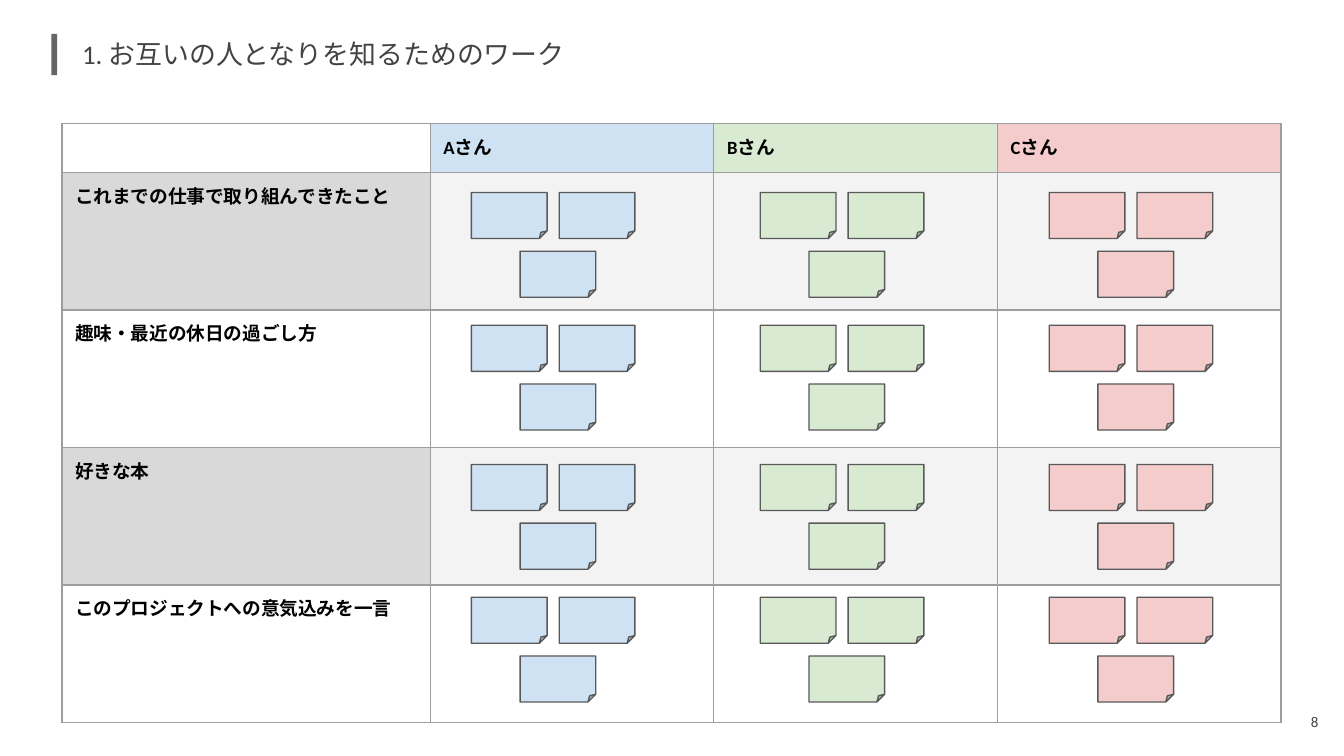
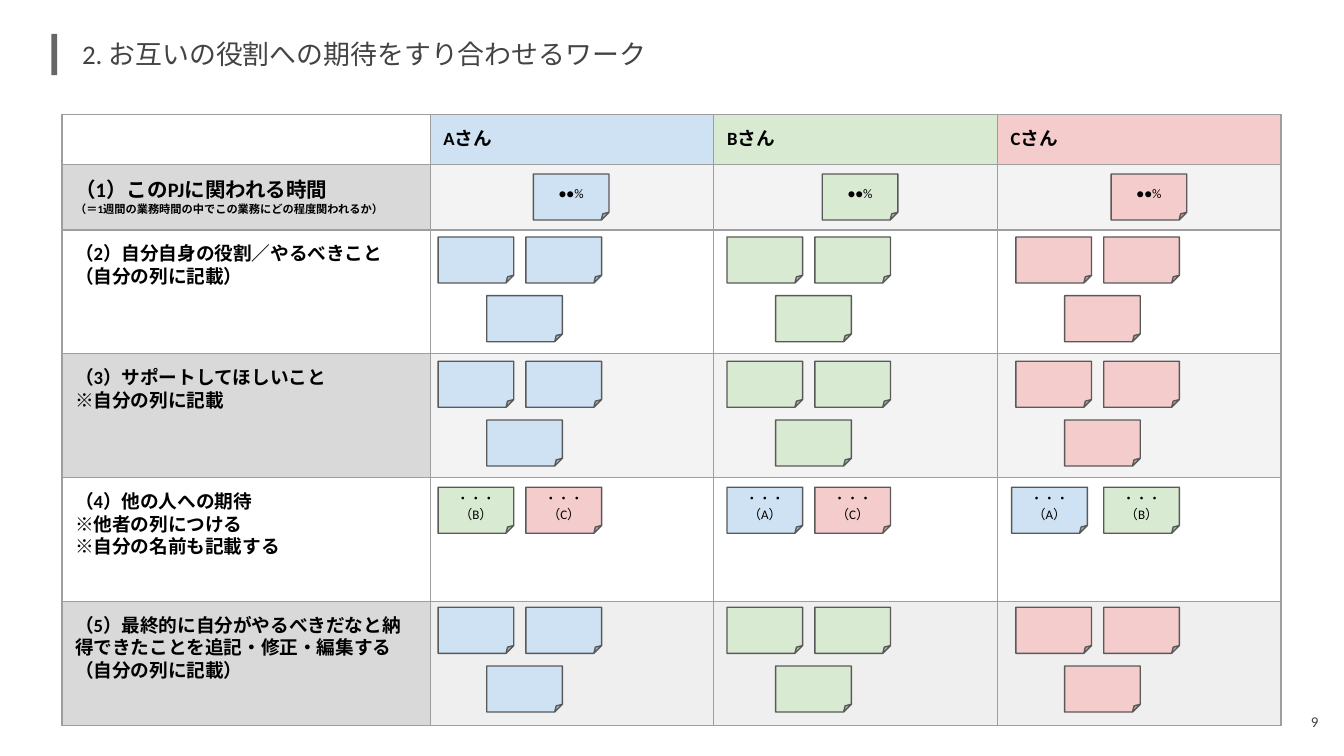
from itertools import product

from lxml.etree import SubElement
from pptx import Presentation
from pptx.dml.color import RGBColor
from pptx.enum.lang import MSO_LANGUAGE_ID as Lang
from pptx.enum.shapes import MSO_SHAPE as Shape
from pptx.enum.text import MSO_ANCHOR as Anchor, MSO_AUTO_SIZE as AutoSize, PP_ALIGN as Align
from pptx.oxml import parse_xml
from pptx.oxml.ns import nsdecls, qn
from pptx.util import Cm, Pt

COLORS = {
    "A": "CFE2F3", "B": "D9EAD3", "C": "F4CCCC",
    "ink": "000000", "title": "434343", "bar": "666666",
    "border": "9E9E9E", "note_line": "595959",
    "label": "D9D9D9", "shade": "F3F3F3", "last_shade": "EFEFEF",
}
FONT = "Calibri"
PEOPLE = "ABC"
NO_STYLE = "{2D5ABB26-0587-4C30-8999-92F81FD0307C}"

# All lengths are in centimetres
TABLE_LEFT = 1.17
LABEL_WIDTH, PERSON_WIDTH = 6.96, 5.36
NOTE_SIZE = (1.43, 0.87)
NOTE_STEP = 5.46                                  # from one person to the next
PAIR = [(0, 0), (1.66, 0)]
TRIO = PAIR + [(0.92, 1.11)]

WORKS = [
    {
        "title": "1. お互いの人となりを知るためのワーク",
        "page": "8", "top": 2.33, "header": 0.89, "notes_left": 7.74,
        "rows": [
            {"height": 2.6, "label": ["これまでの仕事で取り組んできたこと"], "notes": 1.31},
            {"height": 2.6, "label": ["趣味・最近の休日の過ごし方"], "notes": 3.82},
            {"height": 2.6, "label": ["好きな本"], "notes": 6.45},
            {"height": 2.6, "label": ["このプロジェクトへの意気込みを一言"], "notes": 8.96},
        ],
    },
    {
        "title": "2. お互いの役割への期待をすり合わせるワーク",
        "page": "9", "top": 2.17, "header": 0.94, "notes_left": 7.11,
        "rows": [
            {"height": 1.17, "notes": 1.12, "kind": "share", "sizes": [11, 6],
             "label": ["（1）このPJに関われる時間",
                       "（＝1週間の業務時間の中でこの業務にどの程度関われるか）"]},
            {"height": 2.34, "notes": 2.31,
             "label": ["（2）自分自身の役割／やるべきこと", "（自分の列に記載）"]},
            {"height": 2.34, "notes": 4.66,
             "label": ["（3）サポートしてほしいこと", "※自分の列に記載"]},
            {"height": 2.34, "notes": 7.04, "kind": "peers",
             "label": ["（4）他の人への期待", "※他者の列につける", "※自分の名前も記載する"]},
            {"height": 2.34, "notes": 9.31, "shade": "last_shade",
             "label": ["（5）最終的に自分がやるべきだなと納得できたことを"
                       "追記・修正・編集する（自分の列に記載）"]},
        ],
    },
]


def rgb(name):
    return RGBColor.from_string(COLORS[name])


def set_all(target, values):
    for name, value in values.items():
        setattr(target, name, value)


def place(shape, left, top, width, height):
    set_all(shape, {"left": Cm(left), "top": Cm(top),
                    "width": Cm(width), "height": Cm(height)})


def margins(inset):
    sides = ("left", "right", "top", "bottom")
    return {f"margin_{side}": Cm(inset) for side in sides}


def write(frame, lines, sizes, color="ink", bold=False, align=Align.LEFT):
    """Write one paragraph per line; a single size serves all lines."""
    sizes = sizes if len(sizes) == len(lines) else sizes * len(lines)
    for index, (line, size) in enumerate(zip(lines, sizes)):
        paragraph = frame.add_paragraph() if index else frame.paragraphs[0]
        paragraph.alignment = align
        run = paragraph.add_run()
        run.text = line
        set_all(run.font, {"name": FONT, "size": Pt(size), "bold": bold,
                           "language_id": Lang.JAPANESE})
        run.font.color.rgb = rgb(color)
        SubElement(run.font._element, qn("a:ea"), typeface=FONT)


def add_filled(slide, kind, box, fill):
    shape = slide.shapes.add_shape(kind, *map(Cm, box))
    shape.shadow.inherit = False
    shape.fill.solid()
    shape.fill.fore_color.rgb = rgb(fill)
    return shape


# Shared frame: bar on the layout, title and page number on the slide
def add_layout_bar(slide):
    bar = add_filled(slide, Shape.RECTANGLE, (0.97, 0.64, 0.11, 0.78), "bar")
    bar.line.fill.background()
    slide.slide_layout.shapes.element.append(bar._element)


def add_heading(slide, title, page):
    heading = slide.shapes.title
    number = slide.shapes.add_textbox(0, 0, 0, 0)
    for part, box, text, size, align in (
        (heading, (1.3, 0.43, 23.62, 1.17), title, 14.4, Align.LEFT),
        (number, (23.75, 13.21, 1.42, 0.86), page, 8, Align.RIGHT),
    ):
        place(part, *box)
        set_all(part.text_frame, {"word_wrap": True, "auto_size": AutoSize.NONE,
                                  "vertical_anchor": Anchor.MIDDLE, **margins(0.25)})
        write(part.text_frame, [text], [size], "title", align=align)


# Table
def format_cell(cell, fill=None, lines=(), sizes=(10,)):
    set_all(cell, margins(0.25))
    if fill:
        cell.fill.solid()
        cell.fill.fore_color.rgb = rgb(fill)
    else:
        cell.fill.background()
    if lines:
        write(cell.text_frame, lines, list(sizes), bold=True)
    else:
        SubElement(cell.text_frame.paragraphs[0]._p, qn("a:endParaRPr"), sz="1000")
    properties = cell._tc.get_or_add_tcPr()
    for index, side in enumerate("LRTB"):
        properties.insert(index, parse_xml(
            f'<a:ln{side} {nsdecls("a")} w="{Pt(0.75)}"><a:solidFill>'
            f'<a:srgbClr val="{COLORS["border"]}"/></a:solidFill></a:ln{side}>'))


def add_work_table(slide, left, top, header, rows):
    heights = [header] + [row["height"] for row in rows]
    widths = [LABEL_WIDTH] + [PERSON_WIDTH] * len(PEOPLE)
    table = slide.shapes.add_table(
        len(heights), len(widths),
        *map(Cm, (left, top, sum(widths), sum(heights)))).table
    set_all(table, {"first_row": False, "horz_banding": False})
    table._tbl.tblPr.find(qn("a:tableStyleId")).text = NO_STYLE
    for column, width in zip(table.columns, widths):
        column.width = Cm(width)
    for line, height in zip(table.rows, heights):
        line.height = Cm(height)

    format_cell(table.cell(0, 0))
    for column, person in enumerate(PEOPLE, 1):
        format_cell(table.cell(0, column), person, [f"{person}さん"])
    for index, row in enumerate(rows, 1):
        shaded = index % 2 == 1
        format_cell(table.cell(index, 0), "label" if shaded else None,
                    row["label"], row.get("sizes", [10]))
        for column in range(1, len(widths)):
            format_cell(table.cell(index, column),
                        row.get("shade", "shade") if shaded else None)


# Sticky notes
def add_note(slide, left, top, person, lines=()):
    note = add_filled(slide, Shape.FOLDED_CORNER, (left, top, *NOTE_SIZE), person)
    note.line.color.rgb = rgb("note_line")
    note.line.width = Pt(0.75)
    if lines:
        set_all(note.text_frame, {"word_wrap": True, "vertical_anchor": Anchor.MIDDLE,
                                  **margins(0.05)})
        write(note.text_frame, lines, [7], align=Align.CENTER)


def add_notes(slide, left, top, rows):
    for row, (column, person) in product(rows, enumerate(PEOPLE)):
        x, y = left + column * NOTE_STEP, top + row["notes"]
        kind = row.get("kind")
        if kind == "share":
            add_note(slide, x + 1.8, y, person, ["●●%"])
        elif kind == "peers":
            peers = PEOPLE.replace(person, "")
            for peer, (dx, dy) in zip(peers, PAIR):
                # The first note of the last column sits slightly further left
                nudge = 0.08 if (person, peer) == ("C", "A") else 0
                add_note(slide, x + dx - nudge, y + dy, peer, ["・・・", f"（{peer}）"])
        else:
            for dx, dy in TRIO:
                add_note(slide, x + dx, y + dy, person)


def add_work_slide(deck, work):
    slide = deck.slides.add_slide(deck.slide_layouts[5])
    add_heading(slide, work["title"], work["page"])
    add_work_table(slide, TABLE_LEFT, work["top"], work["header"], work["rows"])
    add_notes(slide, TABLE_LEFT + work["notes_left"], work["top"], work["rows"])
    return slide


def main():
    deck = Presentation()
    set_all(deck, {"slide_width": Cm(25.4), "slide_height": Cm(14.29)})
    slides = [add_work_slide(deck, work) for work in WORKS]
    add_layout_bar(slides[0])
    deck.save("out.pptx")


if __name__ == "__main__":
    main()
